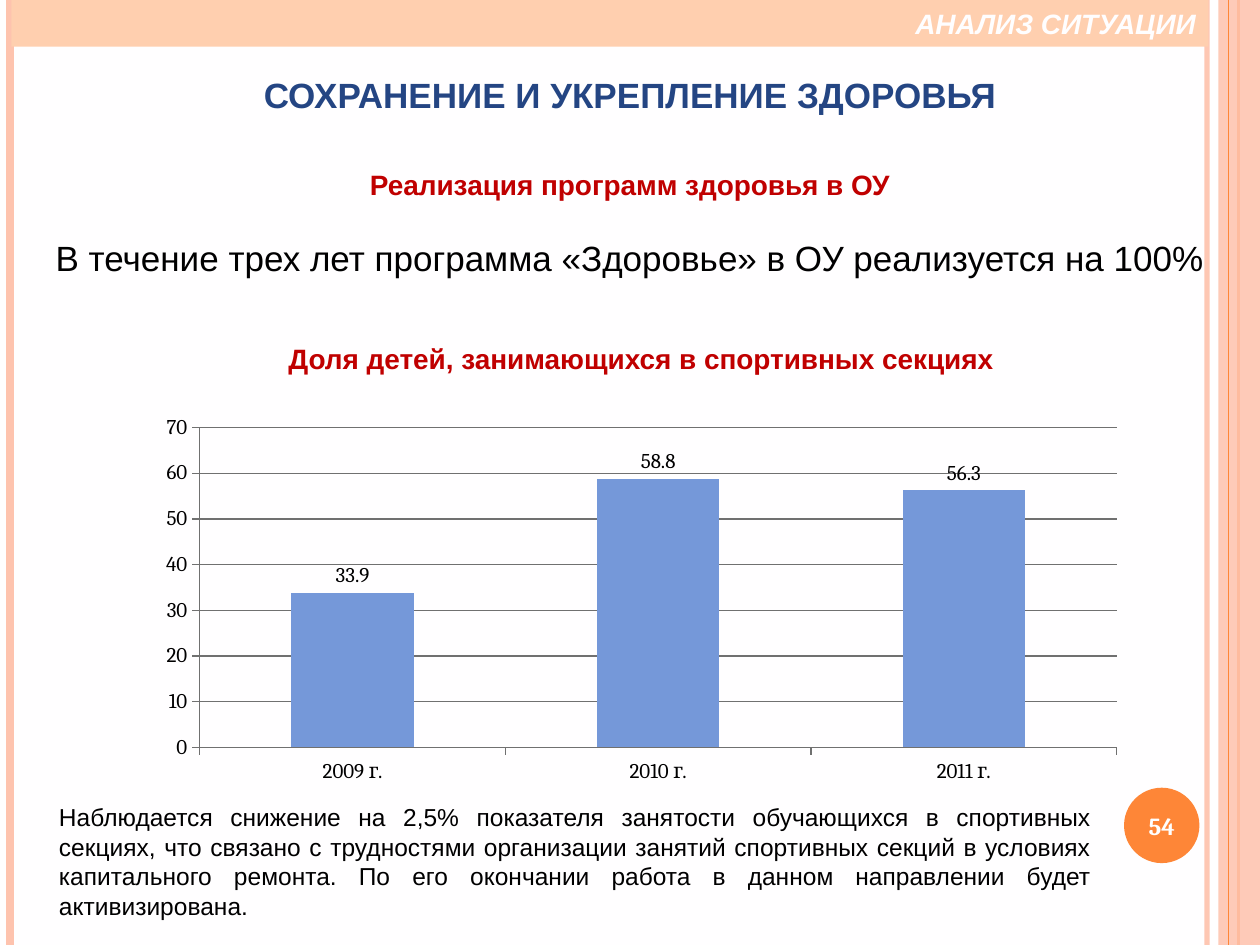
import collections

import lxml.etree
import pptx
import pptx.chart.data
import pptx.dml.color
import pptx.enum.chart
import pptx.enum.shapes
import pptx.enum.text
import pptx.oxml.ns
import pptx.util

Cm = pptx.util.Cm
Pt = pptx.util.Pt
ALIGN = pptx.enum.text.PP_ALIGN
ANCHOR = pptx.enum.text.MSO_ANCHOR
SHAPE = pptx.enum.shapes.MSO_SHAPE
qn = pptx.oxml.ns.qn

Box = collections.namedtuple("Box", "left top width height")  # centimetres

WIDTH, HEIGHT = 25.4, 19.05
WHITE, BLACK, RED, NAVY = "FFFEFF", "000000", "C00000", "244583"
PEACH, ORANGE, BAND, BLUE, GRAY = "FEC3AE", "FE8637", "FFCFAF", "7598D9", "707070"


def color(hex_string):
    return pptx.dml.color.RGBColor.from_string(hex_string)


def lengths(box):
    return [Cm(value) for value in box]


def set_alpha(properties, percent):
    fill_color = next(properties.iter(qn("a:srgbClr")))
    lxml.etree.SubElement(fill_color, qn("a:alpha")).set("val", str(percent * 1000))


def add_filled_shape(slide, kind, box, fill, alpha=None):
    shape = slide.shapes.add_shape(kind, *lengths(box))
    shape.shadow.inherit = False
    shape.fill.solid()
    shape.fill.fore_color.rgb = color(fill)
    shape.line.fill.background()
    if alpha:
        set_alpha(shape._element.spPr, alpha)
    return shape


def add_vertical_line(slide, box, x, line_color, width, alpha=None):
    connector = slide.shapes.add_connector(
        pptx.enum.shapes.MSO_CONNECTOR.STRAIGHT,
        Cm(box.left + x), Cm(box.top), Cm(box.left + x), Cm(box.top + box.height))
    connector.line.color.rgb = color(line_color)
    connector.line.width = Pt(width)
    properties = connector._element.spPr
    if alpha:
        set_alpha(properties, alpha)
    lxml.etree.SubElement(properties, qn("a:effectLst"))


def prepare_frame(shape, anchor):
    frame = shape.text_frame
    frame.word_wrap = True
    frame.auto_size = pptx.enum.text.MSO_AUTO_SIZE.NONE
    frame.vertical_anchor = anchor
    return frame


def fill_paragraph(paragraph, text, size, text_color, align=ALIGN.CENTER,
                   bold=False, italic=False, font="Arial"):
    paragraph.alignment = align
    run = paragraph.add_run()
    run.text = text
    run.font.name = font
    run.font.size = Pt(size)
    run.font.bold = bold
    run.font.italic = italic
    run.font.color.rgb = color(text_color)


def add_text(slide, box, anchor, *arguments, **options):
    frame = prepare_frame(slide.shapes.add_textbox(*lengths(box)), anchor)
    fill_paragraph(frame.paragraphs[0], *arguments, **options)
    return frame


def add_side_decor(slide, box):
    add_vertical_line(slide, box, 24.33, PEACH, 3, alpha=93)
    add_vertical_line(slide, box, 0.2, PEACH, 4.5)
    add_vertical_line(slide, box, 24.97, ORANGE, 1.5)
    strip = Box(box.left + 24.56, box.top, 0.84, box.height)
    add_filled_shape(slide, SHAPE.RECTANGLE, strip, PEACH, alpha=87)
    add_vertical_line(slide, box, 24.77, ORANGE, 0.75)


def add_page_number(slide, box, number):
    add_filled_shape(slide, SHAPE.OVAL, box, ORANGE)
    add_text(slide, box, ANCHOR.MIDDLE, number, 14, "FFFFFF", bold=True, font="Cambria")


def add_section_band(slide, box, text):
    band = add_filled_shape(slide, SHAPE.RECTANGLE, box, BAND)
    frame = prepare_frame(band, ANCHOR.TOP)
    fill_paragraph(frame.paragraphs[0], text, 16, WHITE,
                   align=ALIGN.RIGHT, bold=True, italic=True)


def set_title(slide, box, text):
    title = slide.shapes.title
    title.left, title.top, title.width, title.height = lengths(box)
    frame = prepare_frame(title, ANCHOR.MIDDLE)
    fill_paragraph(frame.paragraphs[0], text, 20, NAVY, bold=True)


def add_program_block(slide, box, heading, statement):
    frame = add_text(slide, box, ANCHOR.MIDDLE, heading, 16, RED, bold=True)
    paragraph = frame.add_paragraph()
    paragraph.space_before = Pt(20.5)
    fill_paragraph(paragraph, statement, 20, BLACK)


def add_share_chart(slide, box):
    data = pptx.chart.data.CategoryChartData()
    data.categories = ["2009 г.", "2010 г.", "2011 г."]
    data.add_series("Series 1", [33.9, 58.8, 56.3])
    chart = slide.shapes.add_chart(
        pptx.enum.chart.XL_CHART_TYPE.COLUMN_CLUSTERED, *lengths(box), data).chart
    chart.has_legend = False
    chart.has_title = False
    chart.font.name = "Cambria"
    chart.font.size = Pt(12)
    chart.font.color.rgb = color(BLACK)

    # Columns and their values
    plot = chart.plots[0]
    plot.gap_width = 150
    plot.vary_by_categories = False
    fill = plot.series[0].format.fill
    fill.solid()
    fill.fore_color.rgb = color(BLUE)
    plot.has_data_labels = True
    plot.data_labels.show_value = True
    plot.data_labels.position = pptx.enum.chart.XL_LABEL_POSITION.OUTSIDE_END

    # Axes
    value_axis = chart.value_axis
    value_axis.minimum_scale = 0
    value_axis.maximum_scale = 70
    value_axis.major_unit = 10
    value_axis.has_major_gridlines = True
    for part in (chart.category_axis, value_axis, value_axis.major_gridlines):
        part.format.line.color.rgb = color(GRAY)
        part.format.line.width = Pt(0.75)
    for axis in (chart.category_axis, value_axis):
        axis.major_tick_mark = pptx.enum.chart.XL_TICK_MARK.OUTSIDE


def main():
    presentation = pptx.Presentation()
    presentation.slide_width = Cm(WIDTH)
    presentation.slide_height = Cm(HEIGHT)
    slide = presentation.slides.add_slide(presentation.slide_layouts.get_by_name("Title Only"))
    slide.background.fill.solid()
    slide.background.fill.fore_color.rgb = color(WHITE)

    # Frame of the page
    add_side_decor(slide, Box(0, 0, WIDTH, HEIGHT))
    add_page_number(slide, Box(22.66, 15.88, 1.52, 1.52), "54")
    add_section_band(slide, Box(0.23, 0, 24.13, 0.94), "АНАЛИЗ СИТУАЦИИ")

    # Title and programme
    set_title(slide, Box(0, 1.24, WIDTH, 1.32), "СОХРАНЕНИЕ И УКРЕПЛЕНИЕ ЗДОРОВЬЯ")
    add_program_block(slide, Box(0, 3.25, WIDTH, 2.49),
                      "Реализация программ здоровья в ОУ",
                      "В течение трех лет программа «Здоровье» в ОУ реализуется на 100%")

    # Share of children in sports sections
    add_text(slide, Box(1.98, 6.76, 21.89, 0.94), ANCHOR.MIDDLE,
             "Доля детей, занимающихся в спортивных секциях", 16, RED, bold=True)
    add_share_chart(slide, Box(2.95, 8.23, 19.96, 7.72))
    add_text(slide, Box(0.94, 16.05, 21.31, 2.64), ANCHOR.TOP,
             "Наблюдается снижение на 2,5% показателя занятости обучающихся в спортивных "
             "секциях, что связано с трудностями организации занятий спортивных секций в "
             "условиях капитального ремонта. По его окончании работа в данном направлении "
             "будет активизирована.", 14, BLACK, align=ALIGN.JUSTIFY)

    presentation.save("out.pptx")


if __name__ == "__main__":
    main()
